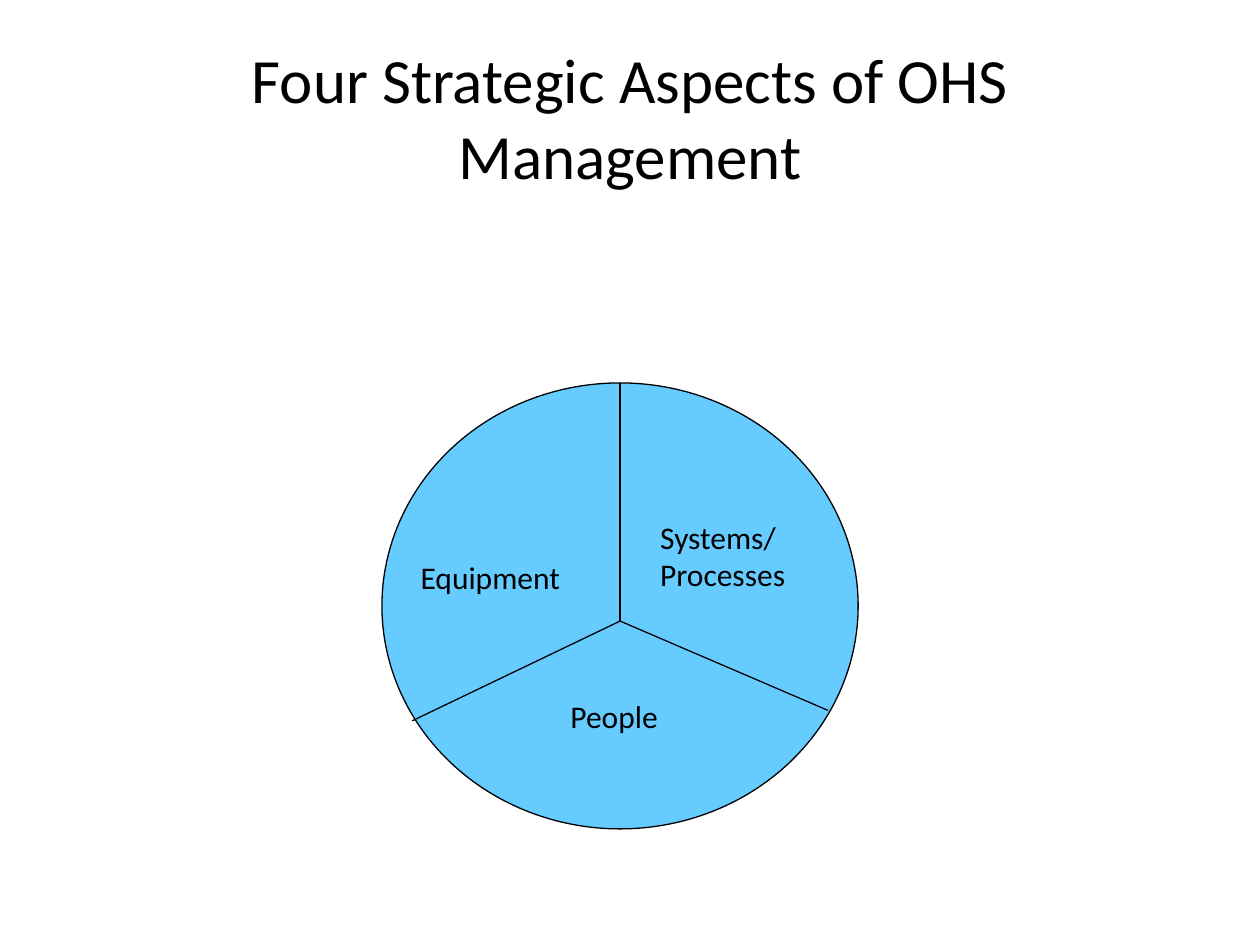
from pptx import Presentation
from pptx.dml.color import RGBColor
from pptx.enum.shapes import MSO_CONNECTOR, MSO_SHAPE
from pptx.enum.text import MSO_ANCHOR, MSO_AUTO_SIZE, PP_ALIGN
from pptx.oxml.ns import qn
from pptx.util import Cm, Pt
from lxml.etree import SubElement

BLACK = RGBColor(0x00, 0x00, 0x00)
SKY_BLUE = RGBColor(0x66, 0xCC, 0xFF)
FONT = "Calibri"
LINE_WIDTH = Pt(0.75)

HUB = (4.8, 4.8)
SPOKE_ENDS = [(4.8, 0), (0.61, 6.81), (8.99, 6.6)]
LABELS = [
    (["Equipment"], 0.53, 3.41, 3.61, 1.09),
    (["Systems/", "Processes"], 5.36, 2.59, 3.25, 1.96),
    (["People"], 3.55, 6.2, 2.44, 1.09),
]


def add_text(slide, lines, left, top, width, height, size, alignment=PP_ALIGN.LEFT):
    """Add a text box with one paragraph per line and return its frame."""
    box = slide.shapes.add_textbox(Cm(left), Cm(top), Cm(width), Cm(height))
    frame = box.text_frame
    for index, line in enumerate(lines):
        paragraph = frame.add_paragraph() if index else frame.paragraphs[0]
        paragraph.alignment = alignment
        run = paragraph.add_run()
        run.text = line
        run.font.name = FONT
        run.font.size = Pt(size)
        run.font.color.rgb = BLACK
    return frame


def add_title(slide, left, top, width, height):
    """Place the centred slide title in the given box."""
    frame = add_text(slide, ["Four Strategic Aspects of OHS Management"],
                     left, top, width, height, 36, PP_ALIGN.CENTER)
    frame.word_wrap = True
    frame.vertical_anchor = MSO_ANCHOR.MIDDLE


def add_aspect_wheel(slide, left, top, width, height):
    """Place the divided ellipse and its labels in the given box."""
    ellipse = slide.shapes.add_shape(
        MSO_SHAPE.OVAL, Cm(left), Cm(top), Cm(width), Cm(height))
    ellipse.shadow.inherit = False
    ellipse.fill.solid()
    ellipse.fill.fore_color.rgb = SKY_BLUE
    ellipse.line.color.rgb = BLACK
    ellipse.line.width = LINE_WIDTH

    for end_x, end_y in SPOKE_ENDS:
        spoke = slide.shapes.add_connector(
            MSO_CONNECTOR.STRAIGHT, Cm(left + HUB[0]), Cm(top + HUB[1]),
            Cm(left + end_x), Cm(top + end_y))
        spoke.line.color.rgb = BLACK
        spoke.line.width = LINE_WIDTH
        SubElement(spoke.element.spPr, qn("a:effectLst"))

    for lines, offset_x, offset_y, label_width, label_height in LABELS:
        frame = add_text(slide, lines, left + offset_x, top + offset_y,
                         label_width, label_height, 18)
        frame.word_wrap = False
        frame.auto_size = MSO_AUTO_SIZE.SHAPE_TO_FIT_TEXT


def main():
    """Build the slide and save the presentation."""
    presentation = Presentation()
    presentation.slide_width = Cm(25.4)
    presentation.slide_height = Cm(19.05)
    slide = presentation.slides.add_slide(presentation.slide_layouts[6])
    add_title(slide, 1.3, 0.76, 22.8, 3.18)
    add_aspect_wheel(slide, 7.7, 7.72, 9.6, 8.99)
    presentation.save("out.pptx")


if __name__ == "__main__":
    main()
